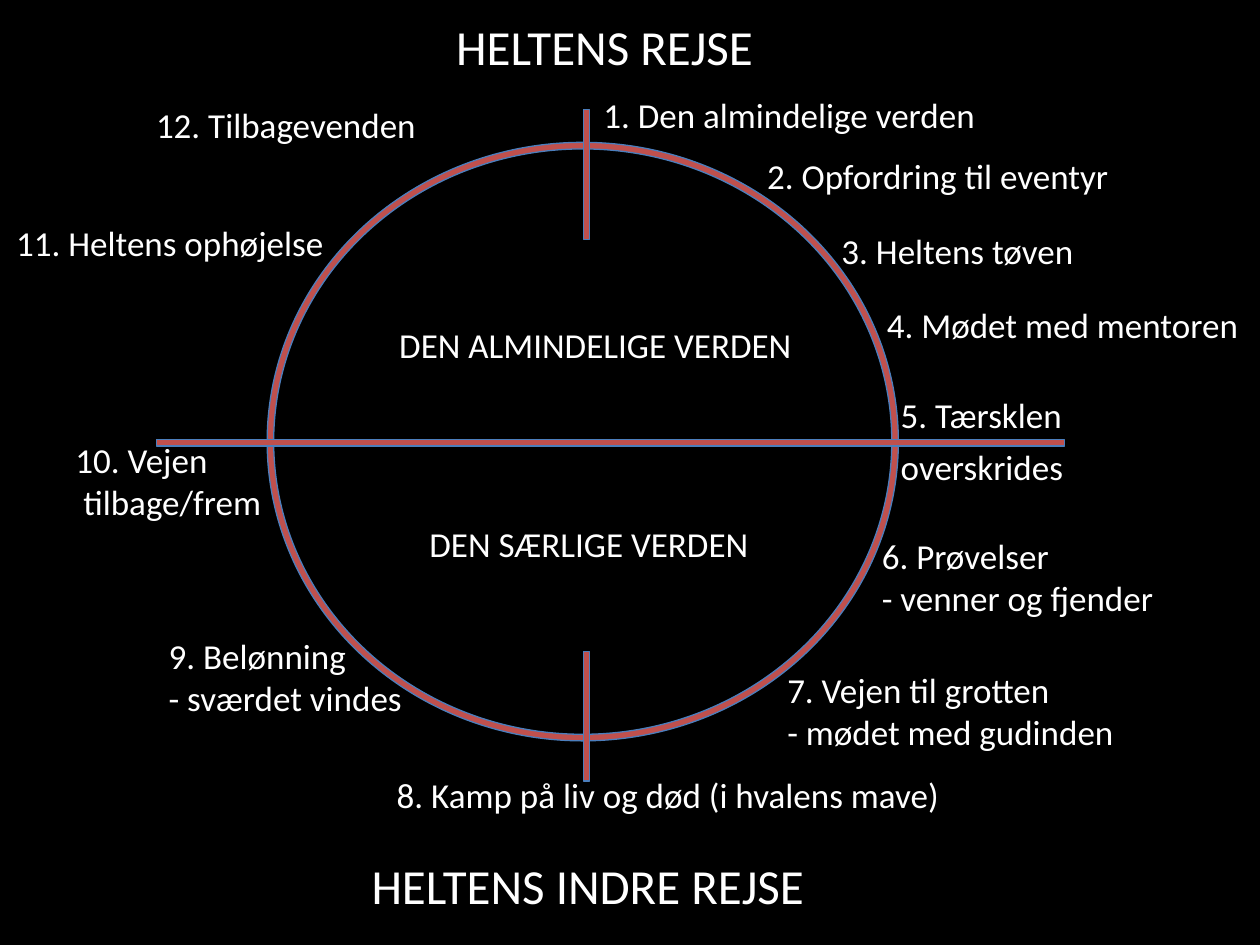
from dataclasses import dataclass

from pptx import Presentation
from pptx.dml.color import RGBColor
from pptx.enum.shapes import MSO_SHAPE
from pptx.enum.text import MSO_ANCHOR, MSO_AUTO_SIZE, PP_ALIGN
from pptx.shapes.autoshape import Shape
from pptx.slide import Slide
from pptx.util import Inches, Pt

DONUT = MSO_SHAPE.DONUT
RECTANGLE = MSO_SHAPE.RECTANGLE
TOP = MSO_ANCHOR.TOP
LEFT = PP_ALIGN.LEFT
FIT_SHAPE = MSO_AUTO_SIZE.SHAPE_TO_FIT_TEXT
TITLE_ONLY = 5


@dataclass(frozen=True)
class Theme:
    background: RGBColor = RGBColor(0x00, 0x00, 0x00)
    ink: RGBColor = RGBColor(0xFF, 0xFF, 0xFF)
    ring: RGBColor = RGBColor(0xC0, 0x50, 0x4D)
    outline: RGBColor = RGBColor(0x4B, 0x7E, 0xBC)
    font: str = "Calibri"
    heading: int = 28
    body: int = 20


@dataclass(frozen=True)
class Box:
    left: float
    top: float
    width: float
    height: float

    def lengths(self) -> tuple:
        return tuple(map(Inches, (self.left, self.top, self.width, self.height)))


@dataclass(frozen=True)
class Label:
    text: str
    box: Box
    size: int
    gap: int = 0


THEME = Theme()
FRAME_FORMAT = {"word_wrap": False, "auto_size": FIT_SHAPE, "vertical_anchor": TOP}

CIRCLE = Box(2.12, 1.13, 5.01, 4.75)
BAR = 0.05
TICK_LEFT, TICK_LENGTH = 4.63, 1.03
THRESHOLD = Box(1.24, 3.49, 7.21, BAR)
TICKS = [Box(TICK_LEFT, top, BAR, TICK_LENGTH) for top in (0.87, 5.17)]

TITLE = Label("HELTENS REJSE", Box(3.52, 0.08, 2.83, 1.04), THEME.heading)
INNER_JOURNEY = Label("HELTENS INDRE REJSE", Box(2.85, 6.74, 4.09, 0.57), THEME.heading)
WORLDS = [
    Label("DEN ALMINDELIGE VERDEN", Box(3.07, 2.52, 3.78, 0.44), THEME.body),
    Label("DEN SÆRLIGE VERDEN", Box(3.31, 4.1, 3.11, 0.44), THEME.body),
]
STAGES = [
    Label("1. Den almindelige verden", Box(4.69, 0.69, 3.43, 0.44), THEME.body),
    Label("2. Opfordring til eventyr", Box(5.99, 1.18, 3.13, 0.44), THEME.body),
    Label("3. Heltens tøven", Box(6.58, 1.77, 2.18, 0.77), THEME.body),
    Label("4. Mødet med mentoren", Box(6.94, 2.36, 3.15, 0.77), THEME.body),
    Label("5. Tærsklen\noverskrides", Box(7.05, 3.07, 1.58, 0.86), THEME.body, gap=6),
    Label("6. Prøvelser\n- venner og fjender", Box(6.9, 4.19, 2.49, 0.77), THEME.body),
    Label("7. Vejen til grotten\n- mødet med gudinden", Box(6.15, 5.26, 2.96, 0.77), THEME.body),
    Label("8. Kamp på liv og død (i hvalens mave)", Box(3.05, 6.09, 4.9, 0.44), THEME.body),
    Label("9. Belønning\n- sværdet vindes", Box(1.24, 4.99, 2.17, 1.11), THEME.body),
    Label("10. Vejen\n tilbage/frem", Box(0.5, 3.43, 1.71, 0.77), THEME.body),
    Label("11. Heltens ophøjelse", Box(0.03, 1.71, 2.84, 0.44), THEME.body),
    Label("12. Tilbagevenden", Box(1.14, 0.77, 2.4, 0.44), THEME.body),
]


def apply(target: object, values: dict) -> None:
    for attribute, value in values.items():
        setattr(target, attribute, value)


def write_label(holder: Shape, label: Label) -> None:
    apply(holder, dict(zip(("left", "top", "width", "height"), label.box.lengths())))
    frame = holder.text_frame
    frame.text = label.text
    apply(frame, FRAME_FORMAT)
    for position, paragraph in enumerate(frame.paragraphs):
        apply(paragraph, {"alignment": LEFT, "space_before": Pt(label.gap if position else 0)})
        for run in paragraph.runs:
            apply(run.font, {"name": THEME.font, "size": Pt(label.size)})
            run.font.color.rgb = THEME.ink


def add_label(slide: Slide, label: Label) -> None:
    write_label(slide.shapes.add_textbox(*label.box.lengths()), label)


def add_band(slide: Slide, kind: MSO_SHAPE, box: Box) -> Shape:
    band = slide.shapes.add_shape(kind, *box.lengths())
    band.shadow.inherit = False
    band.fill.solid()
    band.fill.fore_color.rgb = THEME.ring
    band.line.color.rgb = THEME.outline
    band.line.width = Pt(0.75)
    return band


def main() -> None:
    deck = Presentation()
    apply(deck, {"slide_width": Inches(10), "slide_height": Inches(7.5)})
    slide = deck.slides.add_slide(deck.slide_layouts[TITLE_ONLY])
    slide.background.fill.solid()
    slide.background.fill.fore_color.rgb = THEME.background

    circle = add_band(slide, DONUT, CIRCLE)
    circle.adjustments[0] = 0.011
    for bar in (THRESHOLD, *TICKS):
        add_band(slide, RECTANGLE, bar)

    write_label(slide.shapes.title, TITLE)
    for label in (*WORLDS, *STAGES, INNER_JOURNEY):
        add_label(slide, label)

    deck.save("out.pptx")


if __name__ == "__main__":
    main()
